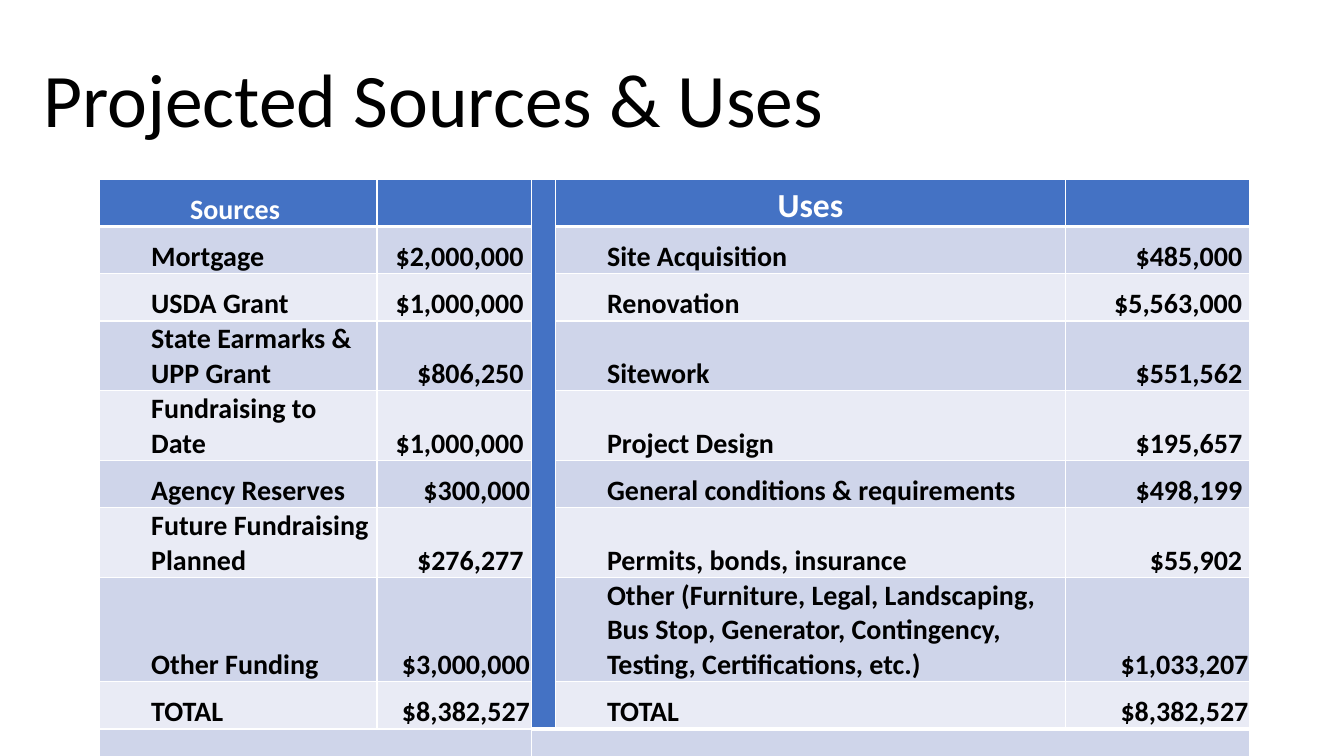
from dataclasses import dataclass

from lxml import etree
from pptx import Presentation
from pptx.dml.color import RGBColor
from pptx.enum.text import MSO_ANCHOR, MSO_AUTO_SIZE, PP_ALIGN
from pptx.oxml.ns import qn
from pptx.util import Cm, Pt

LEFT, CENTER, RIGHT = PP_ALIGN.LEFT, PP_ALIGN.CENTER, PP_ALIGN.RIGHT
BOTTOM = MSO_ANCHOR.BOTTOM
NO_FIT = MSO_AUTO_SIZE.NONE


@dataclass(frozen=True)
class Theme:
    font: str = "Calibri"
    ink: str = "000000"
    white: str = "FFFFFF"
    head: str = "4472C4"
    bands: tuple = ("E9EBF5", "CFD5EA")
    title: int = 54
    large: int = 24
    body: int = 20
    thin: int = 1
    thick: int = 3


HEADS = {0: ("Sources ", "body"), 3: ("Uses", "large")}
ROWS = [
    ("Mortgage", "$2,000,000 ", "Site Acquisition", "$485,000 "),
    ("USDA Grant", "$1,000,000 ", "Renovation", "$5,563,000 "),
    ("State Earmarks & UPP Grant", "$806,250 ", "Sitework", "$551,562 "),
    ("Fundraising to Date", "$1,000,000 ", "Project Design", "$195,657 "),
    ("Agency Reserves", "$300,000",
     "General conditions & requirements", "$498,199 "),
    ("Future Fundraising Planned", "$276,277 ",
     "Permits, bonds, insurance", "$55,902 "),
    ("Other Funding", "$3,000,000",
     "Other (Furniture, Legal, Landscaping, Bus Stop, Generator, "
     "Contingency, Testing, Certifications, etc.)", "$1,033,207"),
    ("TOTAL", "$8,382,527", "TOTAL", "$8,382,527"),
]
WIDTHS = (6.99, 3.89, 0.48, 12.85, 4.65)
HEIGHT = 1.19
GAP = 2  # column of the divider between sources and uses


class Deck:
    def __init__(self, theme):
        self.theme = theme
        self.prs = Presentation()
        self.prs.slide_width, self.prs.slide_height = Cm(33.87), Cm(19.05)
        self.slide = self.prs.slides.add_slide(self.prs.slide_layouts[5])

    def style(self, para, size, color, align, bold=False):
        para.alignment = align
        for run in para.runs:
            font = run.font
            font.name, font.size, font.bold = self.theme.font, Pt(size), bold
            font.color.rgb = RGBColor.from_string(color)

    def title(self, text, left, top, width, height):
        shape = self.slide.shapes.title
        shape.left, shape.top = Cm(left), Cm(top)
        shape.width, shape.height = Cm(width), Cm(height)
        frame = shape.text_frame
        frame.text = text
        frame.word_wrap, frame.auto_size = True, NO_FIT
        frame.vertical_anchor = BOTTOM
        para = frame.paragraphs[0]
        para.line_spacing = 0.9
        self.style(para, self.theme.title, self.theme.ink, LEFT)

    def table(self, left, top, widths, count, height):
        """Add an empty table with banded fills and white borders."""
        theme = self.theme
        grid = self.slide.shapes.add_table(
            count, len(widths), Cm(left), Cm(top),
            Cm(sum(widths)), Cm(height * count)).table
        for col, width in zip(grid.columns, widths):
            col.width = Cm(width)
        for r, row in enumerate(grid.rows):
            row.height = Cm(height)
            for cell in row.cells:
                self.border(cell, r)
                cell.fill.solid()
                color = theme.bands[r % 2] if r else theme.head
                cell.fill.fore_color.rgb = RGBColor.from_string(color)
        return grid

    def border(self, cell, row):
        """Draw all four sides, heavier between header and body."""
        props = cell._tc.get_or_add_tcPr()
        heavy = {0: "lnB", 1: "lnT"}.get(row)
        for side in ("lnL", "lnR", "lnT", "lnB"):
            width = self.theme.thick if side == heavy else self.theme.thin
            line = etree.SubElement(props, qn("a:" + side), w=str(Pt(width)))
            fill = etree.SubElement(line, qn("a:solidFill"))
            etree.SubElement(fill, qn("a:srgbClr"), val=self.theme.white)

    def cell(self, cell, text, size, color, align):
        cell.vertical_anchor = BOTTOM
        cell.margin_left = cell.margin_right = cell.margin_top = Cm(0.03)
        cell.margin_bottom = 0
        cell.text_frame.text = text
        para = cell.text_frame.paragraphs[0]
        if align == LEFT:
            para.level = 1
            props = para._p.get_or_add_pPr()
            props.set("marL", str(Cm(1.27)))
            props.set("indent", "0")
        self.style(para, size, color, align, True)


def main():
    theme = Theme()
    deck = Deck(theme)
    deck.title("Projected Sources & Uses", 0.84, 0.71, 25.65, 3.05)

    last = len(ROWS) + 1
    grid = deck.table(2.51, 4.52, WIDTHS, last + 1, HEIGHT)
    for col, (text, size) in HEADS.items():
        deck.cell(grid.cell(0, col), text, getattr(theme, size),
                  theme.white, CENTER)
    for r, row in enumerate(ROWS, 1):
        for col, text in zip((0, 1, 3, 4), row):
            align = LEFT if col in HEADS else RIGHT
            deck.cell(grid.cell(r, col), text, theme.body, theme.ink, align)

    grid.cell(0, GAP).merge(grid.cell(last - 1, GAP))
    grid.cell(last, 0).merge(grid.cell(last, GAP - 1))
    grid.cell(last, GAP).merge(grid.cell(last, len(WIDTHS) - 1))
    deck.prs.save("out.pptx")


if __name__ == "__main__":
    main()
